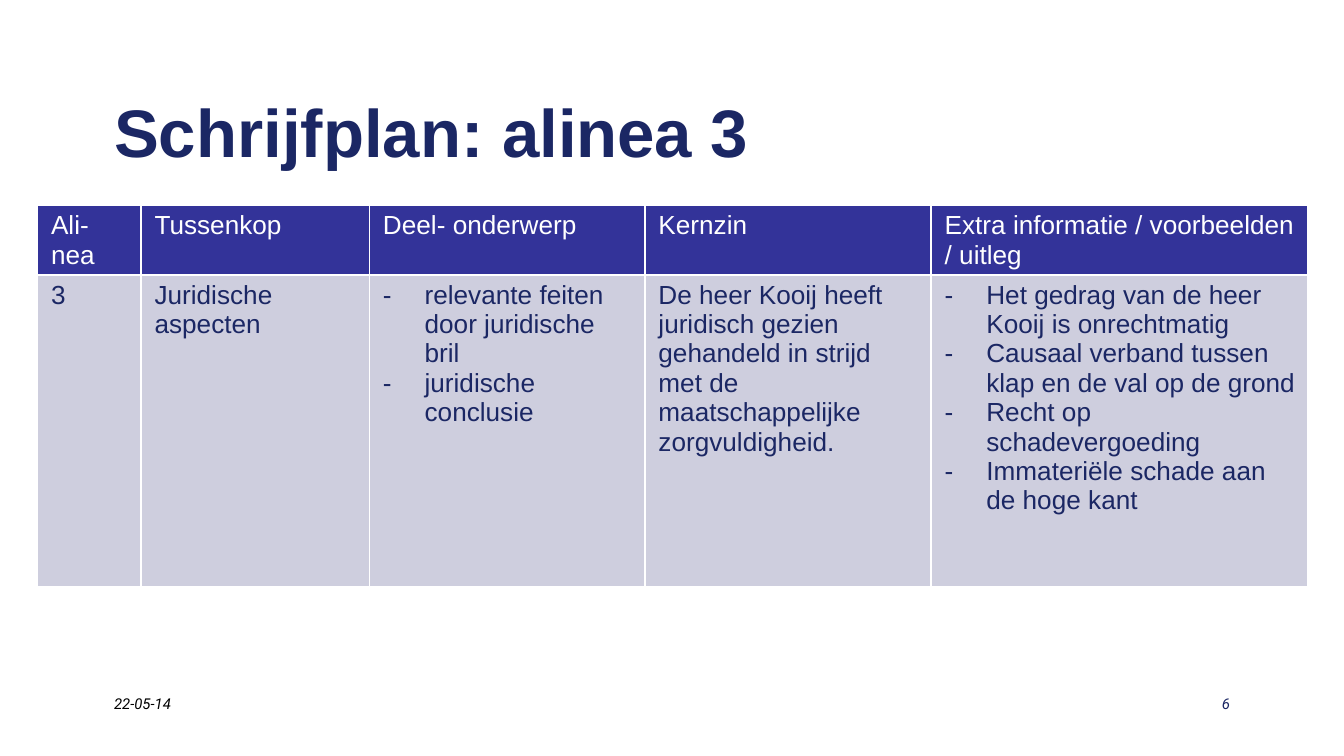
from lxml import etree
from pptx import Presentation
from pptx.dml.color import RGBColor
from pptx.enum.text import MSO_ANCHOR, MSO_AUTO_SIZE, PP_ALIGN
from pptx.oxml.ns import qn
from pptx.util import Inches, Pt

LEFT, RIGHT = PP_ALIGN.LEFT, PP_ALIGN.RIGHT
TOP, MIDDLE = MSO_ANCHOR.TOP, MSO_ANCHOR.MIDDLE
NO_FIT = MSO_AUTO_SIZE.NONE

COLORS = {
    "navy": "1B2764",
    "header": "333399",
    "body": "CECEDE",
    "white": "FFFFFF",
    "black": "000000",
}


def write_text(frame, text, size=14, color="navy", font="Arial", bold=False,
               italic=False, align=LEFT, anchor=TOP, bullet=None):
    frame.word_wrap = True
    frame.vertical_anchor = anchor
    for index, line in enumerate(text.split("\n")):
        para = frame.paragraphs[0] if index == 0 else frame.add_paragraph()
        para.alignment = align
        if bullet:
            properties = para._p.get_or_add_pPr()
            properties.set("marL", str(Inches(0.31)))
            properties.set("indent", str(Inches(-0.31)))
            etree.SubElement(properties, qn("a:buFont"), typeface=font)
            etree.SubElement(properties, qn("a:buChar"), char=bullet)
        span = para.add_run()
        span.text = line
        span.font.name = font
        span.font.size = Pt(size)
        span.font.bold = bold
        span.font.italic = italic
        span.font.color.rgb = RGBColor.from_string(COLORS[color])


def add_borders(cell, color="white", width=1):
    properties = cell._tc.get_or_add_tcPr()
    for index, side in enumerate(("a:lnL", "a:lnR", "a:lnT", "a:lnB")):
        line = etree.Element(qn(side), w=str(Pt(width)))
        fill = etree.SubElement(line, qn("a:solidFill"))
        etree.SubElement(fill, qn("a:srgbClr"), val=COLORS[color])
        properties.insert(index, line)


deck = Presentation()
deck.slide_width, deck.slide_height = Inches(10), Inches(10 * 9 / 16)
page = deck.slides.add_slide(deck.slide_layouts[5])

title = page.shapes.title
title.left, title.top = Inches(0.75), Inches(0.5)
title.width, title.height = Inches(8.5), Inches(0.94)
title.text_frame.auto_size = NO_FIT
write_text(title.text_frame, "Schrijfplan: alinea 3", size=36, bold=True, anchor=MIDDLE)

COLUMN_WIDTHS = [0.77, 1.7, 2.05, 2.13, 2.8]
ROW_HEIGHTS = [0.51, 2.32]
HEADERS = ["Ali-nea", "Tussenkop", "Deel- onderwerp", "Kernzin",
           "Extra informatie / voorbeelden / uitleg"]
PLAN = [
    "3",
    "Juridische aspecten",
    "relevante feiten door juridische bril\njuridische conclusie",
    "De heer Kooij heeft juridisch gezien gehandeld in strijd met de "
    "maatschappelijke zorgvuldigheid.",
    "Het gedrag van de heer Kooij is onrechtmatig\n"
    "Causaal verband tussen klap en de val op de grond\n"
    "Recht op schadevergoeding\n"
    "Immateriële schade aan de hoge kant",
]

table = page.shapes.add_table(
    len(ROW_HEIGHTS), len(COLUMN_WIDTHS), Inches(0.28), Inches(1.53),
    Inches(sum(COLUMN_WIDTHS)), Inches(sum(ROW_HEIGHTS))).table
table.first_row = table.horz_banding = False
for column, width in zip(table.columns, COLUMN_WIDTHS):
    column.width = Inches(width)
for row, height in zip(table.rows, ROW_HEIGHTS):
    row.height = Inches(height)

for row, texts, fill, color in zip(table.rows, (HEADERS, PLAN),
                                   ("header", "body"), ("white", "navy")):
    for cell, text in zip(row.cells, texts):
        cell.margin_left, cell.margin_right = Inches(0.1), Inches(0.09)
        cell.margin_top = cell.margin_bottom = Inches(0.04)
        cell.fill.solid()
        cell.fill.fore_color.rgb = RGBColor.from_string(COLORS[fill])
        add_borders(cell)
        write_text(cell.text_frame, text, color=color, bullet="-" if "\n" in text else None)

for left, text, color, align in ((0.75, "22-05-14", "black", LEFT),
                                 (7.17, "6", "navy", RIGHT)):
    box = page.shapes.add_textbox(Inches(left), Inches(5.12), Inches(2.08), Inches(0.38))
    write_text(box.text_frame, text, size=8, color=color, font="Roboto",
               italic=True, align=align)

deck.save("out.pptx")
